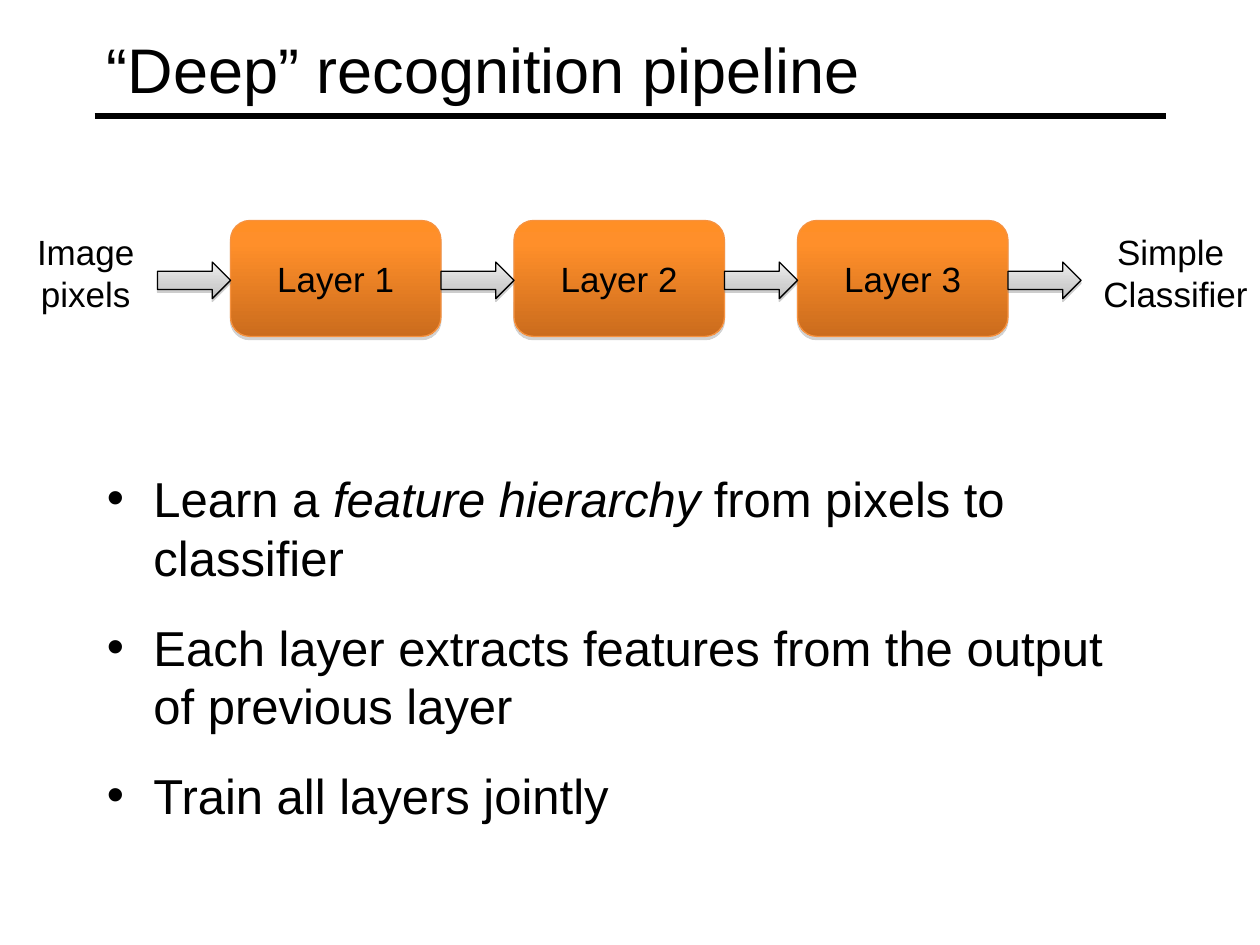
from copy import deepcopy

from lxml.etree import SubElement
from pptx import Presentation
from pptx.dml.color import RGBColor
from pptx.enum.shapes import MSO_CONNECTOR, MSO_SHAPE
from pptx.enum.text import MSO_ANCHOR as Anchor, PP_ALIGN as Align
from pptx.oxml.ns import qn
from pptx.util import Inches, Pt

# Content
TITLE = "“Deep” recognition pipeline"
LAYERS = ["Layer 1", "Layer 2", "Layer 3"]
INPUT, OUTPUT = "Image pixels", "Simple \vClassifier"
BULLETS = [  # each bullet is a list of (text, italic)
    [("Learn a ", False), ("feature hierarchy", True), (" from pixels to classifier", False)],
    [("Each layer extracts features from the output of previous layer", False)],
    [("Train all layers jointly", False)],
]

# Style
FONT = "Arial"
BLACK = RGBColor(0, 0, 0)
ORANGE_EDGE = RGBColor(0xF6, 0x92, 0x40)
ORANGE = [(0, "FF8F26"), (20, "FF8F2A"), (100, "CB6C1D")]
GREY = [(0, "EDEDED"), (65, "D0D0D0"), (100, "BCBCBC")]

# Pipeline grid, in inches
ARROW_LEFT, ARROW_TOP, ARROW_W, ARROW_H = 1.25, 2.08, 0.58, 0.29
LAYER_TOP, LAYER_W, LAYER_H = 1.75, 1.67, 0.92
STEP = ARROW_W + LAYER_W


def style_runs(para, size):
    for span in para.runs:
        span.font.name, span.font.size = FONT, Pt(size)
        span.font.color.rgb = BLACK


def add_text(page, place, anchor=Anchor.TOP, wrap=True):
    frame = page.shapes.add_textbox(*map(Inches, place)).text_frame
    frame.word_wrap, frame.vertical_anchor = wrap, anchor
    return frame


def set_label(frame, text):
    para = frame.paragraphs[0]
    para.text = text
    para.alignment = Align.CENTER
    style_runs(para, 20)


def add_block(page, kind, place, stops, edge, opacity, drop):
    """Add a shape with a vertical gradient and a shadow straight below it."""
    block = page.shapes.add_shape(kind, *map(Inches, place))
    block.line.color.rgb, block.line.width = edge, Pt(0.75)
    block.fill.gradient()
    block.fill.gradient_angle = 270
    properties = block._element.spPr
    stop_list = properties.find(".//" + qn("a:gsLst"))
    pattern = deepcopy(stop_list[0])
    for stop in list(stop_list):
        stop_list.remove(stop)
    for position, color in stops:
        stop = deepcopy(pattern)
        stop.set("pos", str(position * 1000))
        for child in list(stop):
            stop.remove(child)
        SubElement(stop, qn("a:srgbClr"), val=color)
        stop_list.append(stop)
    block.shadow.inherit = False
    shadow = SubElement(properties.find(qn("a:effectLst")), qn("a:outerShdw"),
                        blurRad="0", dist=str(int(Pt(drop))), dir="5400000", rotWithShape="0")
    color = SubElement(shadow, qn("a:srgbClr"), val="808080")
    SubElement(color, qn("a:alpha"), val=str(opacity * 1000))
    return block


deck = Presentation()
deck.slide_width, deck.slide_height = Inches(10), Inches(7.5)
page = deck.slides.add_slide(deck.slide_layouts[6])

# Title and rule
rule = page.shapes.add_connector(
    MSO_CONNECTOR.STRAIGHT, Inches(0.75), Inches(0.92), Inches(9.25), Inches(0.92))
rule.line.color.rgb, rule.line.width = BLACK, Pt(3)
SubElement(rule._element.spPr, qn("a:effectLst"))
title = add_text(page, (0.75, 0.08, 8.5, 0.92), Anchor.MIDDLE)
title.text = TITLE
style_runs(title.paragraphs[0], 36)

# Bullets
body = add_text(page, (0.75, 3.67, 8.5, 3.17))
for index, spans in enumerate(BULLETS):
    para = body.add_paragraph() if index else body.paragraphs[0]
    for text, italic in spans:
        span = para.add_run()
        span.text, span.font.italic = text, italic
    style_runs(para, 28)
    para.space_before, para.space_after = Pt(5.6), Pt(12)
    settings = para._p.get_or_add_pPr()
    settings.set("marL", str(Inches(0.37)))
    settings.set("indent", str(-Inches(0.37)))
    SubElement(settings, qn("a:buFont"), typeface=FONT)
    SubElement(settings, qn("a:buChar"), char="•")

# Layers
for index, name in enumerate(LAYERS):
    left = ARROW_LEFT + ARROW_W + index * STEP
    layer = add_block(page, MSO_SHAPE.ROUNDED_RECTANGLE, (left, LAYER_TOP, LAYER_W, LAYER_H),
                      ORANGE, ORANGE_EDGE, 35, 1.8)
    layer.text_frame.vertical_anchor = Anchor.MIDDLE
    set_label(layer.text_frame, name)

# Arrows before, between and after the layers
for index in range(len(LAYERS) + 1):
    add_block(page, MSO_SHAPE.RIGHT_ARROW, (ARROW_LEFT + index * STEP, ARROW_TOP, ARROW_W, ARROW_H),
              GREY, BLACK, 38, 1.6)

# Input and output labels
set_label(add_text(page, (-0.06, 1.78, 1.48, 0.77)), INPUT)
set_label(add_text(page, (8.65, 1.78, 1.36, 0.77), wrap=False), OUTPUT)

deck.save("out.pptx")
